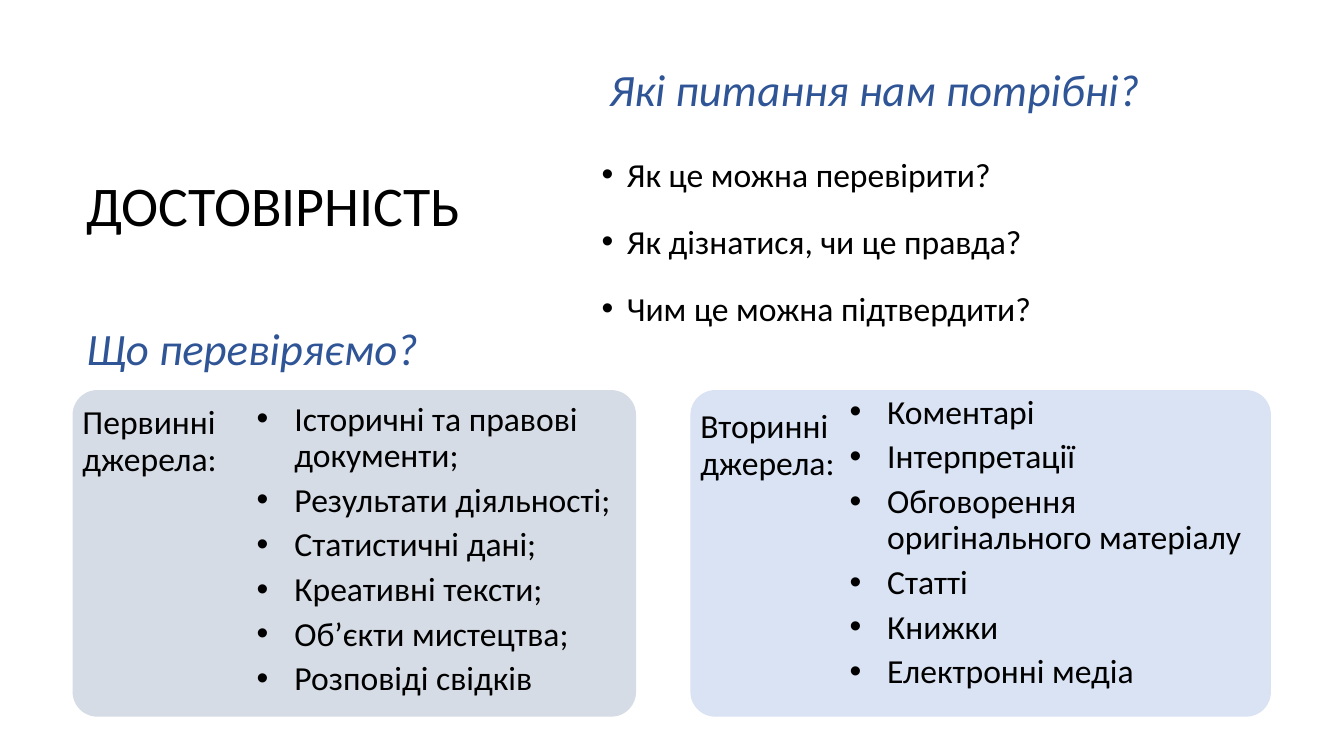
from lxml.etree import SubElement
from pptx import Presentation
from pptx.dml.color import RGBColor
from pptx.enum.shapes import MSO_SHAPE as Shape
from pptx.enum.text import MSO_ANCHOR as Anchor
from pptx.oxml.ns import qn
from pptx.util import Cm, Pt

BLACK = RGBColor(0x00, 0x00, 0x00)
BLUE = RGBColor(0x2F, 0x55, 0x97)
GREY_CARD = RGBColor(0xD6, 0xDC, 0xE5)
BLUE_CARD = RGBColor(0xDA, 0xE3, 0xF3)

QUESTIONS = [
    "Як це можна перевірити?",
    "Як дізнатися, чи це правда?",
    "Чим це можна підтвердити?",
]
PRIMARY = [
    "Історичні та правові документи;",
    "Результати діяльності;",
    "Статистичні дані;",
    "Креативні тексти;",
    "Об’єкти мистецтва;",
    "Розповіді свідків",
]
SECONDARY = [
    "Коментарі",
    "Інтерпретації",
    "Обговорення оригінального матеріалу",
    "Статті",
    "Книжки",
    "Електронні медіа",
]


def add_bullet(para, indent):
    """Give a paragraph a round bullet with a hanging indent in centimetres."""
    properties = para._p.get_or_add_pPr()
    properties.set("marL", str(Cm(indent)))
    properties.set("indent", str(-Cm(indent)))
    SubElement(properties, qn("a:buFont")).set("typeface", "Arial")
    SubElement(properties, qn("a:buChar")).set("char", "•")


def add_text(page, lines, box, size=24, color=BLACK, italic=False,
             anchor=Anchor.TOP, spacing=0.9, indent=0, before=0, after=0):
    """Write one paragraph per line in a box of left, top, width, height."""
    frame = page.shapes.add_textbox(*map(Cm, box)).text_frame
    frame.word_wrap = True
    frame.vertical_anchor = anchor
    for index, line in enumerate(lines):
        para = frame.add_paragraph() if index else frame.paragraphs[0]
        if indent:
            add_bullet(para, indent)
        para.line_spacing = spacing
        para.space_before = Pt(before if index else 0)
        para.space_after = Pt(after)
        span = para.add_run()
        span.text = line
        span.font.name = "Calibri"
        span.font.size = Pt(size)
        span.font.italic = italic
        span.font.color.rgb = color


def add_heading(page, text, box):
    """Write a blue italic heading in the middle of its box."""
    add_text(page, [text], box, size=32, color=BLUE, italic=True,
             anchor=Anchor.MIDDLE)


def add_questions(page, box):
    """Place the heading and the list of questions under it."""
    left, top, width, height = box
    add_heading(page, "Які питання нам потрібні?", (left + 0.2, top, width, 3.15))
    add_text(page, QUESTIONS, (left, top + 3.12, width, height - 3.12),
             indent=0.64, before=10, after=12)


def add_topic(page, box):
    """Place the topic of the slide and the heading for the cards."""
    left, top, width, height = box
    add_text(page, ["ДОСТОВІРНІСТЬ"], (left, top, width, 1.96), size=40, spacing=1)
    add_heading(page, "Що перевіряємо?", (left, top + height - 1.96, 10, 1.96))


def add_card(page, box, fill, label, items, label_drop, list_shift, list_drop):
    """Draw a rounded card with a label at its left and a bulleted list."""
    left, top, width, height = box
    card = page.shapes.add_shape(Shape.ROUNDED_RECTANGLE, *map(Cm, box))
    card.adjustments[0] = 0.076
    card.shadow.inherit = False
    card.fill.solid()
    card.fill.fore_color.rgb = fill
    card.line.fill.background()
    add_text(page, [label], (left, top + label_drop, 4.04, 1.96),
             anchor=Anchor.MIDDLE)
    add_text(page, items, (left + list_shift, top + list_drop, 11.18, height),
             indent=0.95, after=6)


def main():
    """Build the slide and save it."""
    deck = Presentation()
    deck.slide_width, deck.slide_height = Cm(33.87), Cm(19.05)
    page = deck.slides.add_slide(deck.slide_layouts[6])
    add_card(page, (17.4, 9.83, 14.63, 8.23), BLUE_CARD, "Вторинні джерела:",
             SECONDARY, label_drop=0.43, list_shift=3.76, list_drop=0)
    add_card(page, (1.83, 9.83, 14.2, 8.23), GREY_CARD, "Первинні джерела:",
             PRIMARY, label_drop=0.33, list_shift=4.39, list_drop=0.18)
    add_questions(page, (14.91, 0.74, 16.43, 8.15))
    add_topic(page, (1.93, 4.17, 12.47, 5.66))
    deck.save("out.pptx")


if __name__ == "__main__":
    main()
